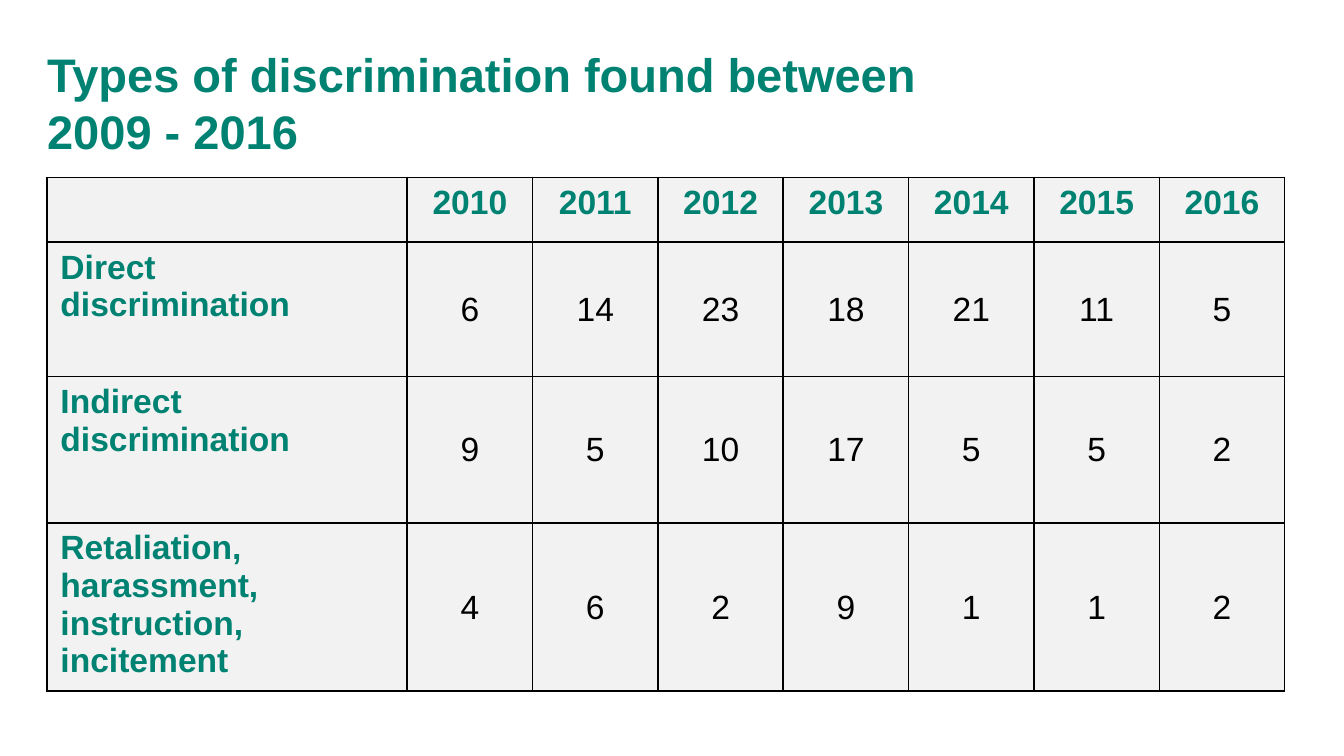
from lxml.etree import SubElement
from pptx import Presentation
from pptx.dml.color import RGBColor
from pptx.enum.text import MSO_ANCHOR, PP_ALIGN
from pptx.oxml.ns import qn
from pptx.util import Inches, Pt

GREEN = RGBColor(0x00, 0x82, 0x73)
BLACK = RGBColor(0x00, 0x00, 0x00)
GREY = RGBColor(0xF2, 0xF2, 0xF2)
FONT = "Arial"
LEFT = 0.35
TABLE_WIDTH, LABEL_WIDTH = 9.21, 2.68
ROW_HEIGHTS = [0.48, 1, 1.09, 1.25]
ROWS = [
    ["", *range(2010, 2017)],
    ["Direct discrimination", 6, 14, 23, 18, 21, 11, 5],
    ["Indirect discrimination", 9, 5, 10, 17, 5, 5, 2],
    ["Retaliation, harassment, instruction, incitement", 4, 6, 2, 9, 1, 1, 2],
]


def add_run(p, text, size, color, bold):
    """Add one formatted run to a paragraph."""
    r = p.add_run()
    r.text = text
    r.font.name = FONT
    r.font.size = Pt(size)
    r.font.bold = bold
    r.font.color.rgb = color


def add_borders(cell):
    """Draw a thin black line on each side of a cell, then fill it."""
    tc_pr = cell._tc.get_or_add_tcPr()
    for side in ("a:lnL", "a:lnR", "a:lnT", "a:lnB"):
        ln = SubElement(tc_pr, qn(side), w=str(Pt(1)))
        fill = SubElement(ln, qn("a:solidFill"))
        SubElement(fill, qn("a:srgbClr"), val=str(BLACK))
    cell.fill.solid()
    cell.fill.fore_color.rgb = GREY


def add_title(s, text, left, top, width, height):
    """Place the slide heading in the given box."""
    sp = s.shapes.add_textbox(*map(Inches, (left, top, width, height)))
    tf = sp.text_frame
    tf.word_wrap = True
    tf.vertical_anchor = MSO_ANCHOR.MIDDLE
    tf.margin_left = tf.margin_right = tf.margin_top = tf.margin_bottom = 0
    add_run(tf.paragraphs[0], text, 25.2, GREEN, True)


def fill_cell(cell, value, is_label, is_header):
    """Write and style one table cell."""
    add_borders(cell)
    p = cell.text_frame.paragraphs[0]
    is_count = not (is_label or is_header)
    if is_label:
        cell.margin_bottom = 0
    else:
        p.alignment = PP_ALIGN.CENTER
    if is_count:
        cell.vertical_anchor = MSO_ANCHOR.MIDDLE
        cell.margin_left = cell.margin_right = cell.margin_top = Inches(0.01)
        cell.margin_bottom = 0
    if value != "":
        add_run(p, str(value), 18, BLACK if is_count else GREEN, not is_count)


def add_counts_table(s, left, top, width, height):
    """Place the table of yearly counts in the given box."""
    box = map(Inches, (left, top, width, height))
    table = s.shapes.add_table(len(ROWS), len(ROWS[0]), *box).table
    table.first_row = table.horz_banding = False
    year_width = (width - LABEL_WIDTH) / (len(ROWS[0]) - 1)
    for i, column in enumerate(table.columns):
        column.width = Inches(year_width if i else LABEL_WIDTH)
    for row, row_height in zip(table.rows, ROW_HEIGHTS):
        row.height = Inches(row_height)
    for i, values in enumerate(ROWS):
        for j, value in enumerate(values):
            fill_cell(table.cell(i, j), value, j == 0, i == 0)


def main():
    """Build and save the slide."""
    prs = Presentation()
    prs.slide_width = Inches(10)
    prs.slide_height = prs.slide_width * 9 // 16
    s = prs.slides.add_slide(prs.slide_layouts[6])
    add_title(s, "Types of discrimination found between 2009 - 2016",
              LEFT, 0.45, 6.78, 0.62)
    add_counts_table(s, LEFT, 1.32, TABLE_WIDTH, sum(ROW_HEIGHTS))
    prs.save("out.pptx")


if __name__ == "__main__":
    main()
